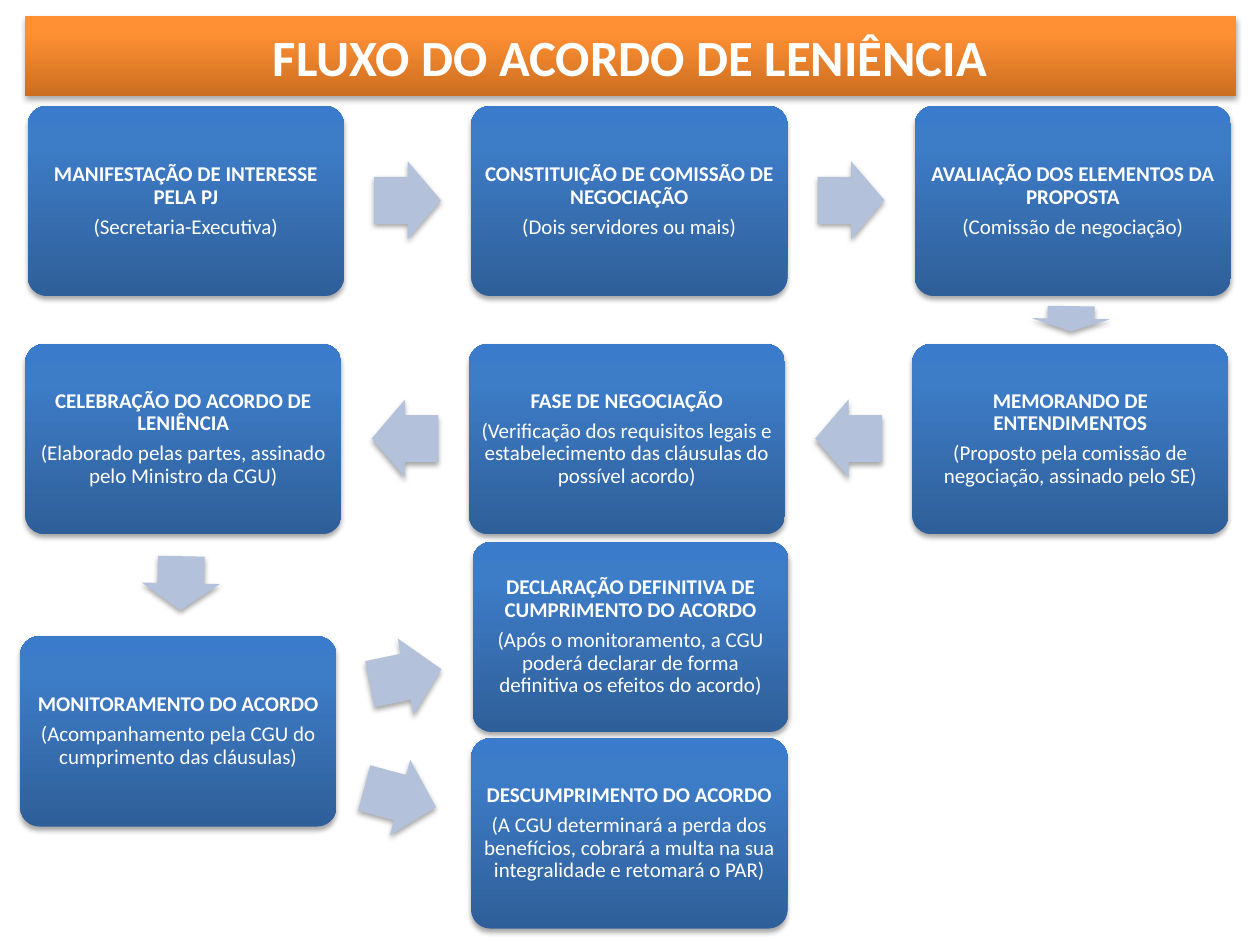
from lxml import etree
from pptx import Presentation
from pptx.dml.color import RGBColor
from pptx.enum.shapes import MSO_SHAPE as Preset
from pptx.enum.text import MSO_ANCHOR as Anchor, PP_ALIGN as Align
from pptx.oxml import parse_xml
from pptx.oxml.ns import nsdecls, qn
from pptx.util import Inches, Pt

STEP_W, STEP_H, COLUMN = 2.51, 1.51, 3.52
ARROW_W, ARROW_H = 0.53, 0.62
BLUE = [(0, "2F5F99"), (80, "3D7CC7"), (100, "3A7CCB")]
ORANGE = [(0, "CC6E20"), (80, "FF9034"), (100, "FF9136")]
INSETS = {f"margin_{side}": Inches(0.05) for side in ("left", "top", "right", "bottom")}
FRAME = {"word_wrap": True, "vertical_anchor": Anchor.MIDDLE}
STEP_PARAGRAPH = {"alignment": Align.CENTER, "line_spacing": 0.9, "space_after": Pt(4.2)}

OPENING = [
    ("MANIFESTAÇÃO DE INTERESSE PELA PJ", "(Secretaria-Executiva)"),
    ("CONSTITUIÇÃO DE COMISSÃO DE NEGOCIAÇÃO", "(Dois servidores ou mais)"),
    ("AVALIAÇÃO DOS ELEMENTOS DA PROPOSTA", "(Comissão de negociação)"),
]
NEGOTIATION = [
    ("MEMORANDO DE ENTENDIMENTOS", "(Proposto pela comissão de negociação, assinado pelo SE)"),
    ("FASE DE NEGOCIAÇÃO",
     "(Verificação dos requisitos legais e estabelecimento das cláusulas do possível acordo)"),
    ("CELEBRAÇÃO DO ACORDO DE LENIÊNCIA", "(Elaborado pelas partes, assinado pelo Ministro da CGU)"),
]
MONITORING = ("MONITORAMENTO DO ACORDO", "(Acompanhamento pela CGU do cumprimento das cláusulas)")
FULFILMENT = ("DECLARAÇÃO DEFINITIVA DE CUMPRIMENTO DO ACORDO",
              "(Após o monitoramento, a CGU poderá declarar de forma definitiva os efeitos do acordo)")
BREACH = ("DESCUMPRIMENTO DO ACORDO",
          "(A CGU determinará a perda dos benefícios, cobrará a multa na sua integralidade e retomará o PAR)")


def color(value):
    return RGBColor.from_string(value)


def apply(target, values):
    for name, value in values.items():
        setattr(target, name, value)


def box(left, top, width, height):
    return dict(zip(("left", "top", "width", "height"), map(Inches, (left, top, width, height))))


def write(paragraph, words, size, bold):
    run = paragraph.add_run()
    run.text = words
    apply(run.font, {"name": "Calibri", "size": Pt(size), "bold": bold})
    run.font.color.rgb = color("FFFFFF")


def shade(shape, stops):
    shape.fill.gradient()
    gradient = shape.fill._xPr.find(qn("a:gradFill"))
    stop_list = gradient.find(qn("a:gsLst"))
    for stop in list(stop_list):
        stop_list.remove(stop)
    for position, value in stops:
        stop = etree.SubElement(stop_list, qn("a:gs"), pos=str(position * 1000))
        etree.SubElement(stop, qn("a:srgbClr"), val=value)
    gradient.find(qn("a:lin")).set("ang", "16200000")


def cast_shadow(shape):
    shape.line.fill.background()
    shape._element.spPr.append(parse_xml(
        f'<a:effectLst {nsdecls("a")}><a:outerShdw blurRad="{Pt(3.1)}" dist="{Pt(1.8)}" '
        'dir="5400000" rotWithShape="0"><a:srgbClr val="000000"><a:alpha val="35000"/>'
        '</a:srgbClr></a:outerShdw></a:effectLst>'))


def add_banner(slide, left, top, width, height):
    banner = slide.shapes.title
    apply(banner, box(left, top, width, height))
    shade(banner, ORANGE)
    cast_shadow(banner)
    apply(banner.text_frame, FRAME)
    heading = banner.text_frame.paragraphs[0]
    heading.alignment = Align.CENTER
    write(heading, "FLUXO DO ACORDO DE LENIÊNCIA", 29, True)


def add_step(slide, left, top, step):
    card = slide.shapes.add_shape(Preset.ROUNDED_RECTANGLE, **box(left, top, STEP_W, STEP_H))
    card.adjustments[0] = 0.1
    shade(card, BLUE)
    cast_shadow(card)
    frame = card.text_frame
    apply(frame, FRAME | INSETS)
    stage, detail = frame.paragraphs[0], frame.add_paragraph()
    for paragraph, words, bold in ((stage, step[0], True), (detail, step[1], False)):
        apply(paragraph, STEP_PARAGRAPH)
        write(paragraph, words, 12, bold)


def add_arrow(slide, left, top, rotation=0, length=ARROW_W):
    arrow = slide.shapes.add_shape(Preset.RIGHT_ARROW, **box(left, top, length, ARROW_H))
    arrow.adjustments[0], arrow.adjustments[1] = 0.6, 0.5
    arrow.rotation = rotation
    arrow.fill.solid()
    arrow.fill.fore_color.rgb = color("B3C1DB")
    cast_shadow(arrow)


def add_row(slide, left, top, steps, leftward=False):
    last = len(steps) - 1
    for index, step in enumerate(steps):
        column = last - index if leftward else index
        add_step(slide, left + column * COLUMN, top, step)
        if index < last:
            gap = column - 1 if leftward else column
            add_arrow(slide, left + gap * COLUMN + 2.75, top + 0.44, 180 if leftward else 0)


def add_outcomes(slide, left, top):
    add_step(slide, left, top + 0.75, MONITORING)
    add_arrow(slide, left + 2.77, top + 0.76, 348.2, 0.58)
    add_step(slide, left + 3.59, top, FULFILMENT)
    add_arrow(slide, left + 2.72, top + 1.72, 15, 0.59)
    add_step(slide, left + 3.58, top + 1.56, BREACH)


def main():
    deck = Presentation()
    apply(deck, {"slide_width": Inches(10), "slide_height": Inches(7.5)})
    slide = deck.slides.add_slide(deck.slide_layouts[5])
    add_banner(slide, 0.2, 0.13, 9.61, 0.63)
    add_row(slide, 0.22, 0.84, OPENING)
    add_arrow(slide, 8.4, 2.22, 90.8, 0.2)
    add_row(slide, 0.2, 2.73, NEGOTIATION, leftward=True)
    add_arrow(slide, 1.22, 4.32, 91.1, 0.43)
    add_outcomes(slide, 0.16, 4.3)
    deck.save("out.pptx")


if __name__ == "__main__":
    main()
